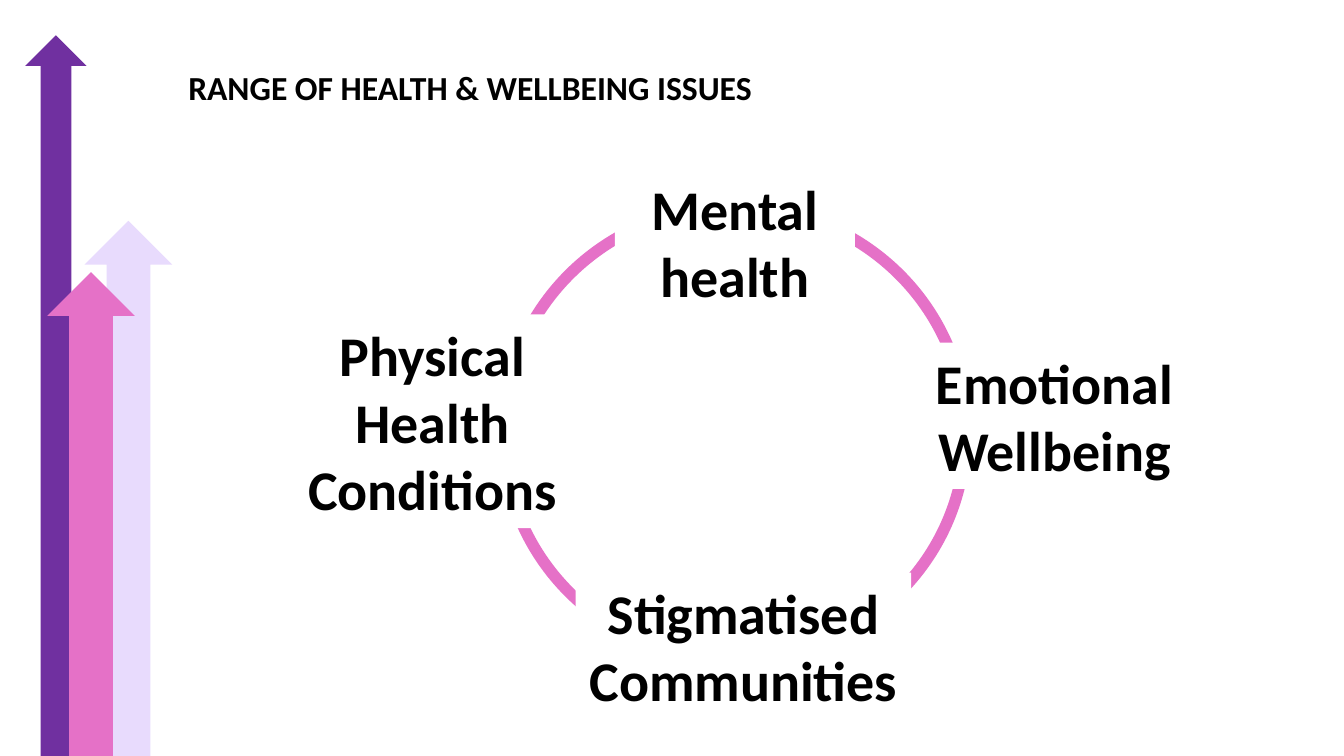
import pptx
import pptx.util
import pptx.dml.color
import pptx.enum.shapes
import pptx.enum.text

Pt = pptx.util.Pt
SHAPE = pptx.enum.shapes.MSO_SHAPE
ALIGN = pptx.enum.text.PP_ALIGN
ANCHOR = pptx.enum.text.MSO_ANCHOR

WIDTH, HEIGHT = 960, 540
WHITE, BLACK = "FFFFFF", "000000"
PINK, PURPLE, LILAC = "E571C7", "7030A0", "E8DBFD"


def color(hex_string):
    return pptx.dml.color.RGBColor.from_string(hex_string)


def add_shape(s, kind, x, y, w, h, fill=None):
    sp = s.shapes.add_shape(kind, Pt(x), Pt(y), Pt(w), Pt(h))
    sp.shadow.inherit = False
    sp.line.fill.background()
    if fill:
        sp.fill.solid()
        sp.fill.fore_color.rgb = color(fill)
    else:
        sp.fill.background()
    return sp


def write(sp, text, size, align):
    tf = sp.text_frame
    tf.word_wrap = True
    tf.text = text
    for p in tf.paragraphs:
        p.alignment = align
        for r in p.runs:
            r.font.name = "Calibri"
            r.font.size = Pt(size)
            r.font.bold = True
            r.font.color.rgb = color(BLACK)


def add_arrows(s, x, bottom):
    arrows = [
        (42.5, 157.7, 62.6, LILAC),
        (0, 25.2, 43.9, PURPLE),
        (15.8, 194.4, 62.6, PINK),
    ]
    for dx, top, w, fill in arrows:
        add_shape(s, SHAPE.UP_ARROW, x + dx, top, w, bottom - top, fill)


def add_title(s, x, y, w, h):
    sp = s.shapes.add_textbox(Pt(x), Pt(y), Pt(w), Pt(h))
    write(sp, "RANGE OF HEALTH & WELLBEING ISSUES", 24, ALIGN.LEFT)


def add_cycle(s, x, y, w, h):
    ring = add_shape(s, SHAPE.OVAL, x, y, w, h)
    ring.line.color.rgb = color(PINK)
    ring.line.width = Pt(8.25)
    issues = [
        ("Physical Health Conditions", -152.6, 77, 204.5, 152.6),
        ("Mental health", 79.9, -27.4, 171.4, 104.4),
        ("Emotional\nWellbeing", 272.2, 97.2, 243.4, 104.4),
        ("Stigmatised Communities", 51.8, 261.4, 239.8, 104.4),
    ]
    for text, dx, dy, box_w, box_h in issues:
        sp = add_shape(s, SHAPE.RECTANGLE, x + dx, y + dy, box_w, box_h, WHITE)
        sp.text_frame.vertical_anchor = ANCHOR.MIDDLE
        write(sp, text, 40, ALIGN.CENTER)


def main():
    prs = pptx.Presentation()
    prs.slide_width, prs.slide_height = Pt(WIDTH), Pt(HEIGHT)
    s = prs.slides.add_slide(prs.slide_layouts[6])
    add_arrows(s, 18, HEIGHT)
    add_title(s, 127.4, 43.9, 819.4, 36)
    add_cycle(s, 359.3, 147.6, 330.5, 324)
    prs.save("out.pptx")


if __name__ == "__main__":
    main()
